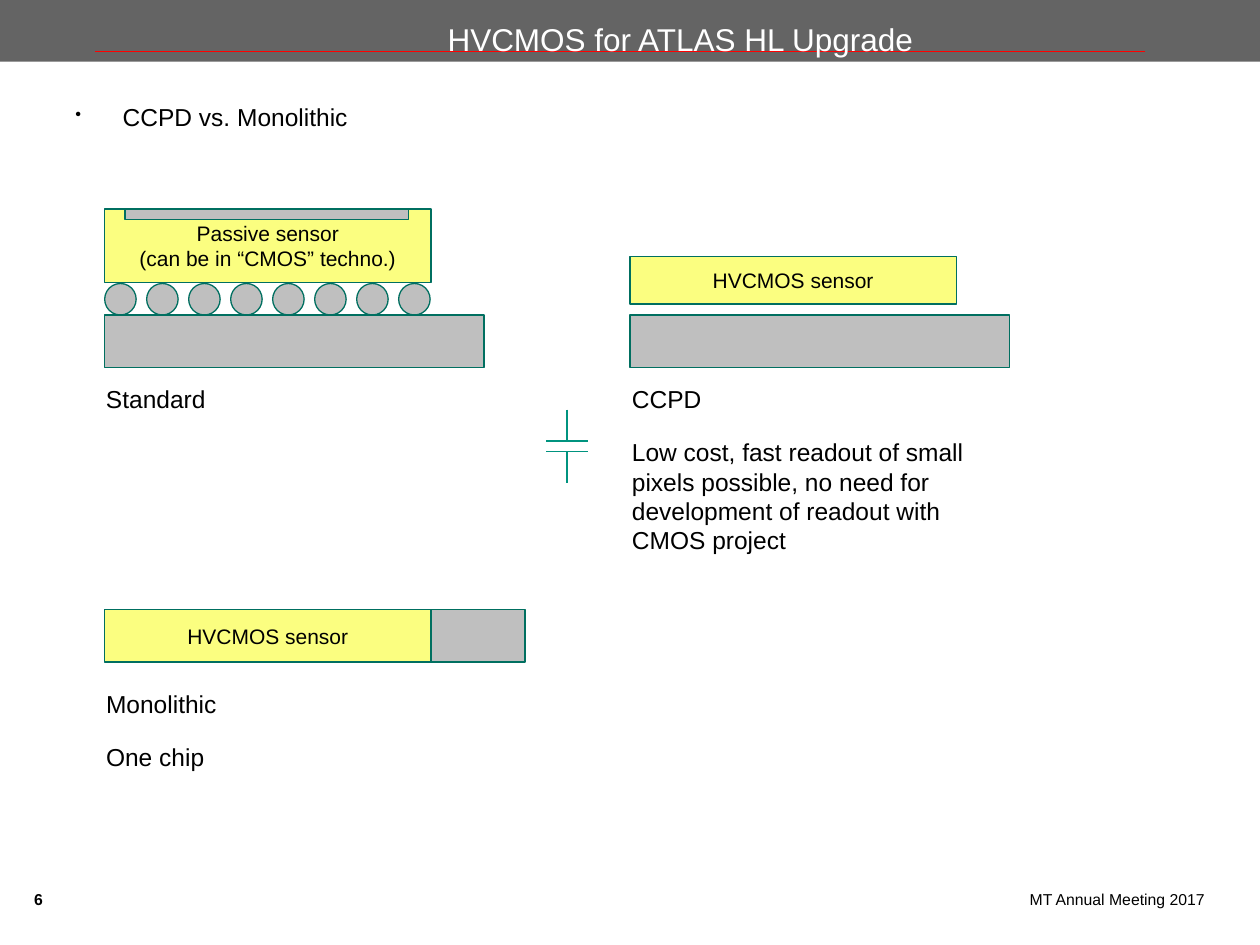
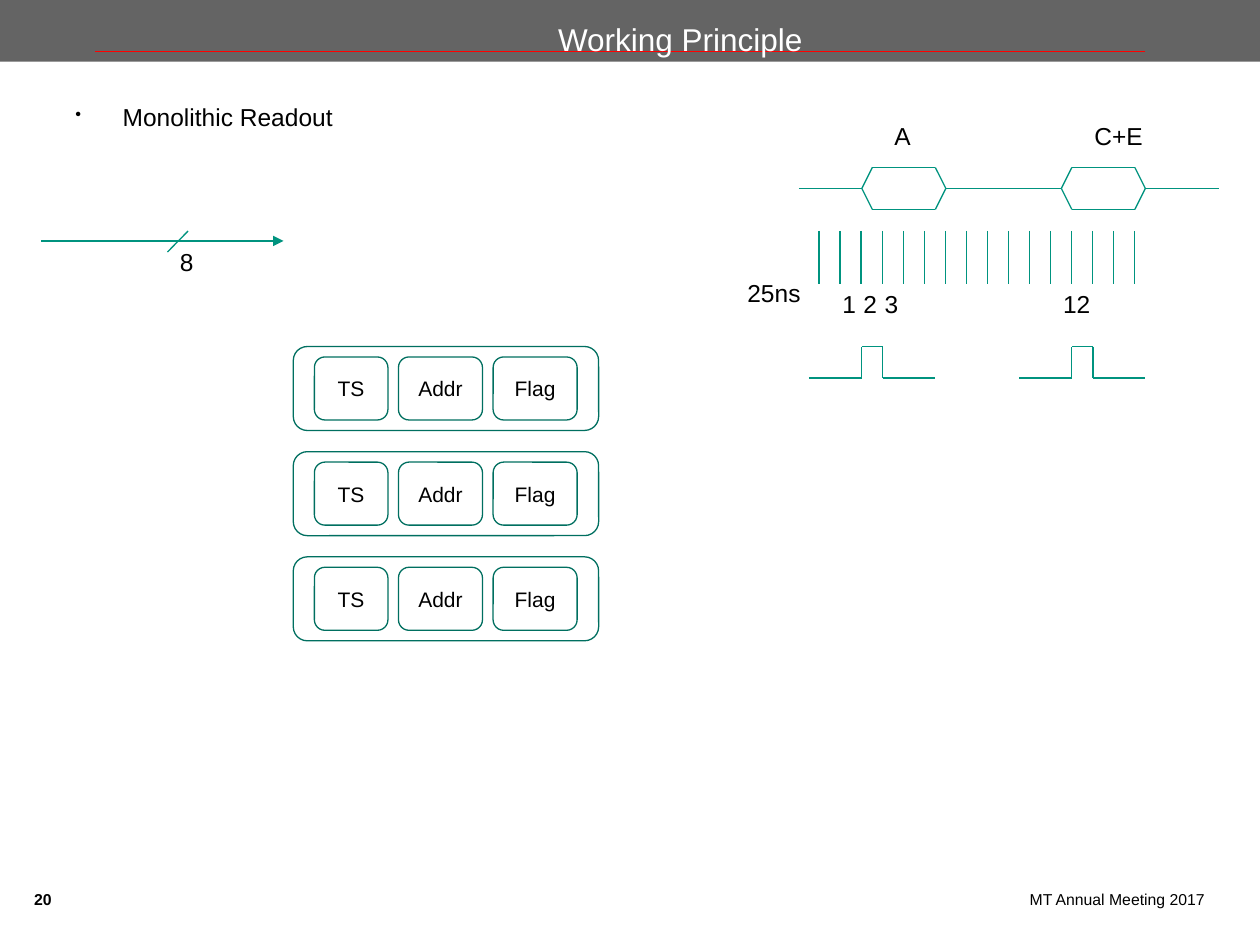
from dataclasses import dataclass
from itertools import pairwise
from typing import Any

from lxml import etree
from pptx import Presentation
from pptx import util as u
from pptx.dml import color
from pptx.enum import shapes, text
from pptx.oxml import ns

Pt = u.Pt
COLORS = {
    "band": "646464", "rule": "FF0000", "title": "FFFFFF", "ink": "000000",
    "sensor": "FBFE80", "chip": "BFBFBF", "outline": "006F60", "wire": "00937F",
}
FONT = "Arial"
LEFT, CENTER, RIGHT = text.PP_ALIGN.LEFT, text.PP_ALIGN.CENTER, text.PP_ALIGN.RIGHT
RECT, OVAL, ROUND = (shapes.MSO_SHAPE.RECTANGLE, shapes.MSO_SHAPE.OVAL,
                     shapes.MSO_SHAPE.ROUNDED_RECTANGLE)
NO_INSET = {side: 0 for side in ("margin_left", "margin_top", "margin_right", "margin_bottom")}
MIDDLE = {"vertical_anchor": text.MSO_ANCHOR.MIDDLE}
GROW = {"auto_size": text.MSO_AUTO_SIZE.SHAPE_TO_FIT_TEXT}


@dataclass(frozen=True)
class Label:
    words: str
    left: float
    top: float
    width: float
    height: float = 24.5
    wrap: bool = False


@dataclass(frozen=True)
class Block:
    left: float
    top: float
    width: float
    height: float
    fill: str | None = None
    words: str = ""
    outline: str | None = "outline"
    preset: shapes.MSO_SHAPE = RECT


# Drawing helpers
def rgb(name: str) -> color.RGBColor:
    return color.RGBColor.from_string(COLORS[name])


def apply(target: Any, values: dict[str, Any]) -> None:
    for attribute, value in values.items():
        setattr(target, attribute, value)


def write(frame: Any, words: str, size: float, align: text.PP_ALIGN = LEFT,
          ink: str = "ink", bold: bool = False) -> None:
    for index, line in enumerate(words.split("\n")):
        paragraph = frame.add_paragraph() if index else frame.paragraphs[0]
        paragraph.alignment = align
        run = paragraph.add_run()
        run.text = line
        apply(run.font, {"name": FONT, "size": Pt(size), "bold": bold})
        run.font.color.rgb = rgb(ink)


def text_frame(slide: Any, left: float, top: float, width: float, height: float,
               **values: Any) -> Any:
    frame = slide.shapes.add_textbox(Pt(left), Pt(top), Pt(width), Pt(height)).text_frame
    apply(frame, {"word_wrap": True} | values)
    return frame


def draw_label(slide: Any, label: Label) -> None:
    frame = text_frame(slide, label.left, label.top, label.width, label.height,
                       **GROW, word_wrap=label.wrap)
    write(frame, label.words, 14)


def draw_block(slide: Any, block: Block) -> None:
    shape = slide.shapes.add_shape(block.preset, Pt(block.left), Pt(block.top),
                                   Pt(block.width), Pt(block.height))
    shape.shadow.inherit = False
    if block.fill:
        shape.fill.solid()
        shape.fill.fore_color.rgb = rgb(block.fill)
    else:
        shape.fill.background()
    if block.outline:
        shape.line.color.rgb = rgb(block.outline)
        shape.line.width = Pt(0.75)
    else:
        shape.line.fill.background()
    if block.words:
        apply(shape.text_frame, MIDDLE)
        write(shape.text_frame, block.words, 12, CENTER)


def draw_wire(slide: Any, *points: tuple[float, float], ink: str = "wire",
              width: float = 0.75, arrow: bool = False) -> None:
    """Join the points one after another with straight lines."""
    for (x1, y1), (x2, y2) in pairwise(points):
        wire = slide.shapes.add_connector(shapes.MSO_CONNECTOR.STRAIGHT,
                                          Pt(x1), Pt(y1), Pt(x2), Pt(y2))
        wire.line.color.rgb = rgb(ink)
        wire.line.width = Pt(width)
        properties = wire.element.spPr
        if arrow:
            outline = properties.find(ns.qn("a:ln"))
            etree.SubElement(outline, ns.qn("a:tailEnd"), type="triangle")
        etree.SubElement(properties, ns.qn("a:effectLst"))


# Shared frame: footer, number, band, rule, title and topic
def start_slide(deck: Any, number: int, title: str, topic: str) -> Any:
    slide = deck.slides.add_slide(deck.slide_layouts[6])
    write(text_frame(slide, 473, 508.3, 215.3, 28, **NO_INSET),
          "MT Annual Meeting 2017", 9, RIGHT)
    write(text_frame(slide, 19.5, 508.3, 26, 17.3, **NO_INSET), str(number), 9, bold=True)
    draw_block(slide, Block(0, 0, 720, 35.3, "band", outline=None))
    draw_wire(slide, (654.5, 29.5), (54, 29.5), ink="rule", width=1)
    write(text_frame(slide, 93.6, 8.6, 590.4, 27.4, **MIDDLE), title, 18, CENTER, "title")

    topic_frame = text_frame(slide, 36, 54.7, 648, 30)
    topic_format = topic_frame.paragraphs[0]._p.get_or_add_pPr()
    apply_indent = {"marL": Pt(27), "indent": Pt(-27)}
    for name, value in apply_indent.items():
        topic_format.set(name, str(int(value)))
    etree.SubElement(topic_format, ns.qn("a:buSzPct"), val="70000")
    etree.SubElement(topic_format, ns.qn("a:buChar"), char="•")
    write(topic_frame, topic, 14)
    return slide


def build_sensor_types(deck: Any) -> None:
    slide = start_slide(deck, 6, "HVCMOS for ATLAS HL Upgrade", "CCPD vs. Monolithic")
    standard_x, ccpd_x, sensor_width, chip_width = 59.8, 360, 186.5, 216.7
    bump_pitch, bump_size = 24, 18

    # Sensors, bump bonds and readout chips
    blocks = [
        Block(standard_x, 119.5, sensor_width, 42, "sensor",
              "Passive sensor\n(can be in “CMOS” techno.)"),
        *(Block(standard_x + bump * bump_pitch, 162, bump_size, bump_size, "chip", preset=OVAL)
          for bump in range(8)),
        Block(standard_x, 180, chip_width, 30, "chip"),
        Block(71.5, 119.5, 162, 6, "chip"),
        Block(ccpd_x, 146.7, sensor_width, 27, "sensor", "HVCMOS sensor"),
        Block(ccpd_x, 180, chip_width, 30, "chip"),
        Block(standard_x, 348.3, sensor_width, 30, "sensor", "HVCMOS sensor"),
        Block(standard_x + sensor_width, 348.3, 53.8, 30, "chip"),
    ]
    for block in blocks:
        draw_block(slide, block)

    # Coupling capacitor
    for lead_y, plate_y in ((234, 252), (276, 258)):
        draw_wire(slide, (324, lead_y), (324, plate_y))
        draw_wire(slide, (336, plate_y), (312, plate_y))

    # Captions
    standard_text, ccpd_text = standard_x - 6.3, ccpd_x - 6
    for label in (
        Label("Standard", standard_text, 216, 72),
        Label("CCPD", ccpd_text, 216, 54.7),
        Label("Low cost, fast readout of small pixels possible, no need for "
              "development of readout with CMOS project", ccpd_text, 246.3, 222.5, 75, True),
        Label("Monolithic", standard_text, 390.3, 77.8),
        Label("One chip", standard_text, 420.5, 222.5, wrap=True),
    ):
        draw_label(slide, label)


def build_readout(deck: Any) -> None:
    slide = start_slide(deck, 20, "Working Principle", "Monolithic Readout")

    # Eight-bit bus
    draw_wire(slide, (23.5, 137.7), (162, 137.7), arrow=True)
    draw_wire(slide, (107.5, 132), (95.7, 144))

    # Data words on the bus line
    mid, high, low = 107.7, 95.7, 119.7
    word_starts, word_width, slope = (492.5, 606.5), 48, 6
    for start in word_starts:
        end = start + word_width
        draw_wire(slide, (start, mid), (start + slope, high), (end - slope, high), (end, mid),
                  (end - slope, low), (start + slope, low), (start, mid))
    first, second = word_starts
    for begin, end in ((456.5, first), (first + word_width, second),
                       (second + word_width, 696.5)):
        draw_wire(slide, (begin, mid), (end, mid))

    # Clock ticks
    tick_pitch = 12.03
    for tick in range(16):
        tick_x = 468 + tick * tick_pitch
        draw_wire(slide, (tick_x, 132), (tick_x, 162))

    # Pulses, each one tick wide
    for rise in (492.3, 612.5):
        fall = rise + tick_pitch
        draw_wire(slide, (rise - 30, 216), (rise, 216), (rise, 198),
                  (fall, 198), (fall, 216), (fall + 30, 216))

    # Pixel registers
    for row in range(3):
        top = 198 + row * 60.1
        draw_block(slide, Block(167.6, top, 174.5, 48, preset=ROUND))
        for words, left, width in (("TS", 179.7, 42), ("Addr", 227.7, 48), ("Flag", 281.8, 48)):
            draw_block(slide, Block(left, top + 6, width, 36, words=words, preset=ROUND))

    # Captions
    for label in (
        Label("8", 95.7, 137.7, 22.3),
        Label("A", 504, 65.6, 23.8),
        Label("C+E", 618.3, 65.6, 42.5),
        Label("25ns", 420, 155.6, 45.4),
        *(Label(str(cycle + 1), 474.3 + cycle * tick_pitch, 161.7, 22.3) for cycle in range(3)),
        Label("12", 600.4, 161.7, 30.2),
    ):
        draw_label(slide, label)


def main() -> None:
    deck = Presentation()
    apply(deck, {"slide_width": Pt(720), "slide_height": Pt(540)})
    build_sensor_types(deck)
    build_readout(deck)
    deck.save("out.pptx")


if __name__ == "__main__":
    main()
